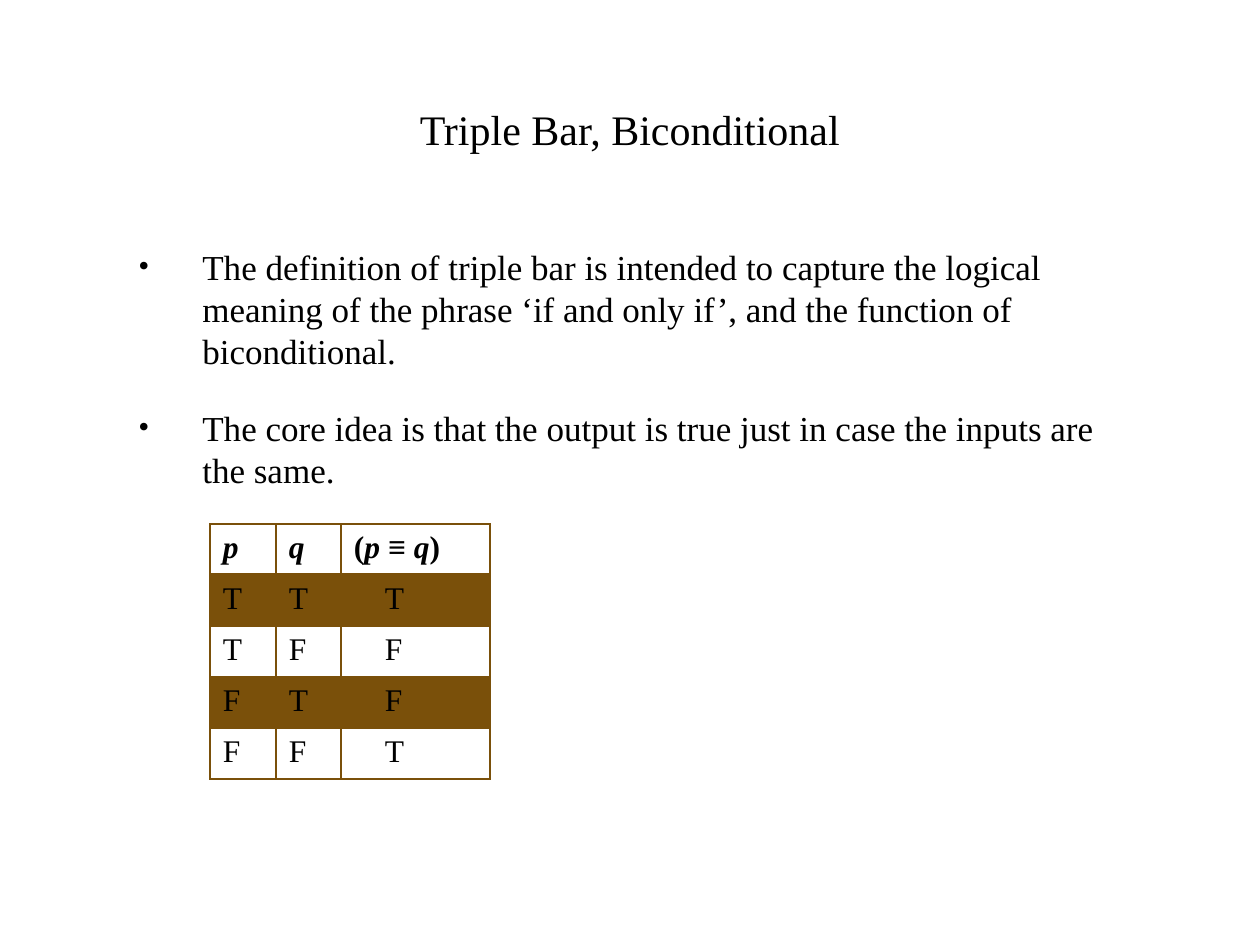
from dataclasses import dataclass

import lxml.etree
import pptx
import pptx.dml.color
import pptx.enum.text
import pptx.oxml
import pptx.oxml.ns
import pptx.util

SCALE = 914400 / 126


@dataclass(frozen=True)
class Theme:
    face: str = "Times New Roman"
    ink: str = "000000"
    brown: str = "7A500A"
    tint: int = 20
    title: int = 24
    body: int = 20
    cell: int = 18
    pitch: int = 24
    gap: int = 20


@dataclass(frozen=True)
class Box:
    left: int
    top: int
    width: int
    height: int

    def emu(self) -> tuple:
        return tuple(px(n) for n in (self.left, self.top, self.width, self.height))


@dataclass(frozen=True)
class Run:
    text: str
    slant: bool = False


@dataclass(frozen=True)
class Row:
    cells: tuple
    head: bool = False
    band: bool = False


THEME = Theme()
TITLE = Box(126, 69, 1008, 120)
BODY = Box(126, 239, 1008, 560)
COLS = (66, 65, 149)
HIGH = 51
INDENT = 64
INSET = 13
SHIFT = 44
POINTS = (
    "The definition of triple bar is intended to capture the logical meaning "
    "of the phrase ‘if and only if’, and the function of biconditional.",
    "The core idea is that the output is true just in case the inputs are the same.",
)
HEAD = Row(
    (
        (Run("p", True),),
        (Run("q", True),),
        (Run("("), Run("p ", True), Run("≡ "), Run("q", True), Run(")")),
    ),
    head=True,
)
TRUTH = ("TTT", "TFF", "FTF", "FFT")
ROWS = (HEAD,) + tuple(
    Row(tuple((Run(mark),) for mark in line), band=num % 2 == 0)
    for num, line in enumerate(TRUTH)
)


def px(size: int) -> pptx.util.Emu:
    return pptx.util.Emu(round(size * SCALE))


def color(code: str) -> pptx.dml.color.RGBColor:
    return pptx.dml.color.RGBColor.from_string(code)


def sub(node, tag: str, **attrs: str):
    return lxml.etree.SubElement(node, pptx.oxml.ns.qn(tag), attrs)


def style(para, size: int, bold: bool = False) -> None:
    font = para.font
    font.name = THEME.face
    font.size = pptx.util.Pt(size)
    font.bold = bold
    font.color.rgb = color(THEME.ink)


def frame(slide, box: Box):
    text = slide.shapes.add_textbox(*box.emu()).text_frame
    text.word_wrap = True
    return text


def title(slide) -> None:
    text = frame(slide, TITLE)
    text.vertical_anchor = pptx.enum.text.MSO_ANCHOR.MIDDLE
    para = text.paragraphs[0]
    para.text = "Triple Bar, Biconditional"
    para.alignment = pptx.enum.text.PP_ALIGN.CENTER
    style(para, THEME.title)


def points(slide) -> None:
    text = frame(slide, BODY)
    for num, line in enumerate(POINTS):
        para = text.add_paragraph() if num else text.paragraphs[0]
        para.text = line
        para.line_spacing = pptx.util.Pt(THEME.pitch)
        para.space_before = pptx.util.Pt(THEME.gap if num else 0)
        props = para._p.get_or_add_pPr()
        props.set("marL", str(px(INDENT)))
        props.set("indent", str(-px(INDENT)))
        sub(props, "a:buSzPct", val="90000")
        sub(props, "a:buFont", typeface=THEME.face)
        sub(props, "a:buChar", char="•")
        style(para, THEME.body)


def edge(cell, side: str, width: int) -> None:
    line = sub(cell._tc.get_or_add_tcPr(), f"a:ln{side}", w=str(pptx.util.Pt(width)))
    sub(sub(line, "a:solidFill"), "a:srgbClr", val=THEME.brown)


def paint(cell, band: bool) -> None:
    if not band:
        cell.fill.background()
        return
    cell.fill.solid()
    cell.fill.fore_color.rgb = color(THEME.brown)
    shade = cell._tc.tcPr.find(".//" + pptx.oxml.ns.qn("a:solidFill") + "/*")
    sub(shade, "a:alpha", val=str(THEME.tint * 1000))


def fill(cell, runs: tuple, row: Row, top: int, last: bool) -> None:
    for side, width in (("L", 1), ("R", 1), ("T", top), ("B", 2 if row.head else 1)):
        edge(cell, side, width)
    paint(cell, row.band)
    cell.margin_left = px(SHIFT if last and not row.head else INSET)
    para = cell.text_frame.paragraphs[0]
    for item in runs:
        run = para.add_run()
        run.text = item.text
        run.font.italic = item.slant
    style(para, THEME.cell, row.head)


def table(slide) -> None:
    box = Box(210, 524, sum(COLS), HIGH * len(ROWS))
    grid = slide.shapes.add_table(len(ROWS), len(COLS), *box.emu()).table
    grid.first_row = False
    grid.horz_banding = False
    for col, width in zip(grid.columns, COLS):
        col.width = px(width)
    for y, row in enumerate(ROWS):
        grid.rows[y].height = px(HIGH)
        for x, runs in enumerate(row.cells):
            fill(grid.cell(y, x), runs, row, 2 if y == 1 else 1, x == len(COLS) - 1)


def main() -> None:
    deck = pptx.Presentation()
    deck.slide_width = px(1260)
    deck.slide_height = px(945)
    slide = deck.slides.add_slide(deck.slide_layouts[6])
    title(slide)
    points(slide)
    table(slide)
    deck.save("out.pptx")


if __name__ == "__main__":
    main()
